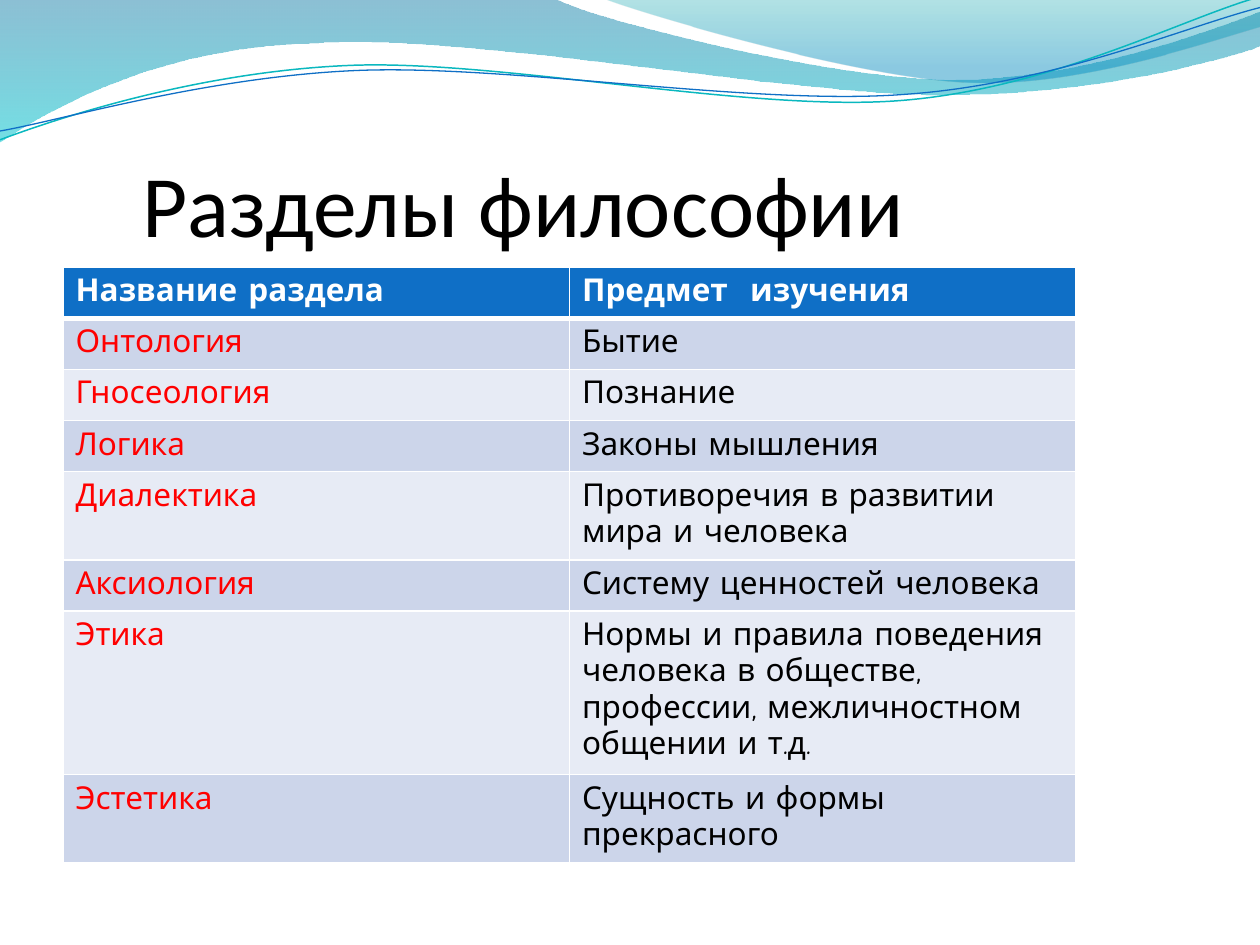
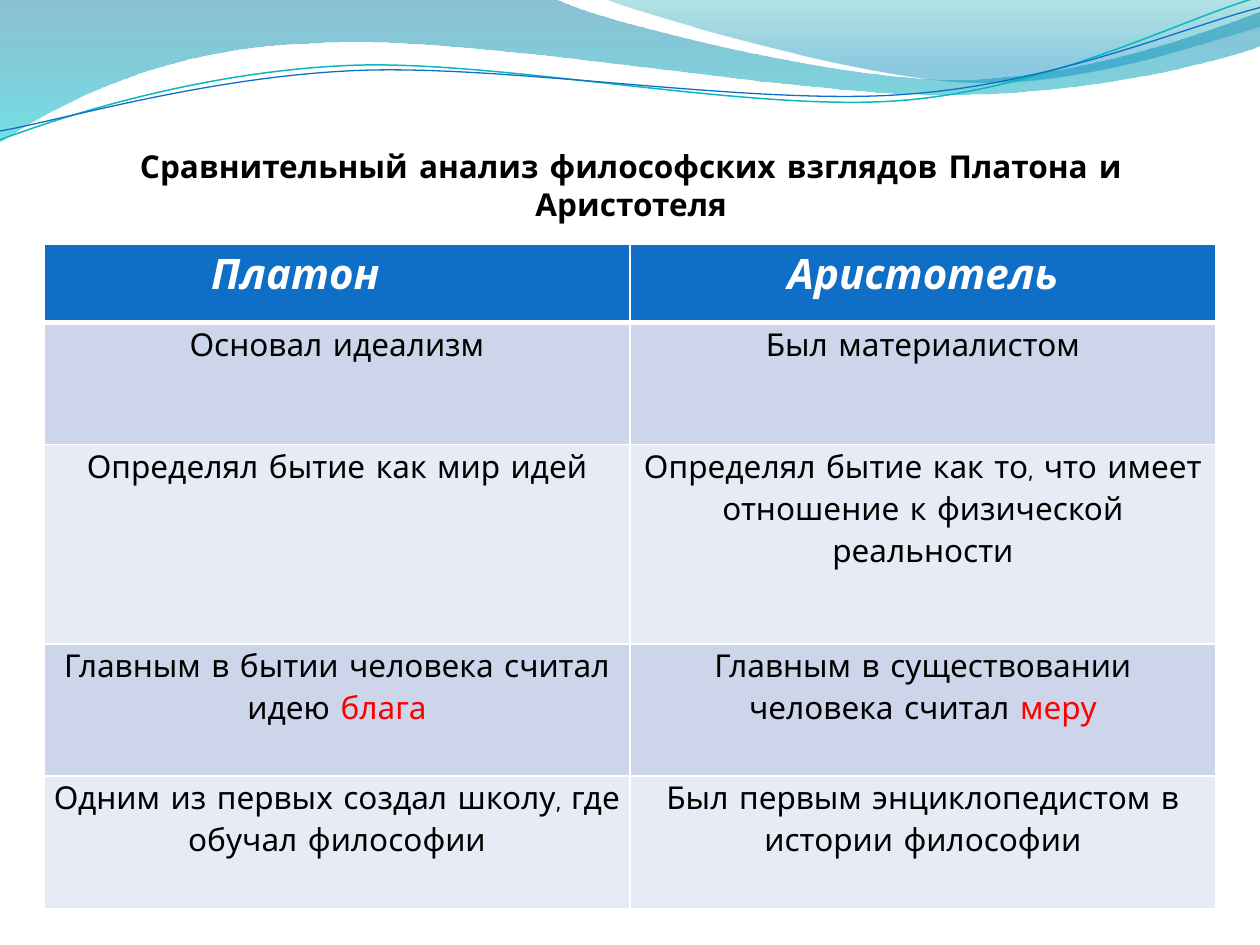
from lxml import etree
from pptx import Presentation, util as u
from pptx.dml.color import RGBColor
from pptx.enum import text
from pptx.oxml import ns

WHITE, BLACK = RGBColor(255, 255, 255), RGBColor(0, 0, 0)
RED = RGBColor(255, 0, 0)
HEADER_BLUE = RGBColor(0x0F, 0x6F, 0xC6)
LINE_TEAL = RGBColor(0x0A, 0xB8, 0xBF)
BANDS = RGBColor(0xCC, 0xD5, 0xEA), RGBColor(0xE7, 0xEB, 0xF5)
DEEP_BLUE, AQUA = RGBColor(0, 0x74, 0xA1), RGBColor(0, 0xC6, 0xCF)
SEA_GREEN, SKY_BLUE = RGBColor(0, 0xA1, 0xA9), RGBColor(0, 0x8B, 0xBF)
TABLE_FONT, TITLE_FONT = "Comic Neue", "Calibri"
SLIDE_WIDTH, SLIDE_HEIGHT = 10, 7.5

# Outlines in inches: a pair is a straight step, a six-tuple is a cubic curve.
# Gradient stops: position, colour, opacity in percent.
WAVE_FILLS = [
    ([(0, 0), (4.4, -0.01),
      (4.76, 0.17, 6.64, 0.63, 7.58, 0.63), (8.53, 0.63, 9.58, 0.26, 10, 0.09),
      (10.01, 0.36),
      (9.83, 0.44, 8.7, 0.76, 7.46, 0.75), (6.22, 0.75, 3.82, 0.28, 2.57, 0.34),
      (1.29, 0.36, 0.46, 0.83, -0.01, 1.13)],
     [(0, DEEP_BLUE, 45), (1, AQUA, 55)]),
    ([(4.79, -0.01),
      (5.09, 0.11, 6.82, 0.62, 7.69, 0.65), (8.56, 0.69, 9.61, 0.32, 10, 0.21),
      (10, 0)],
     [(0, SEA_GREEN, 30), (0.8, SKY_BLUE, 45)]),
]
WAVE_LINES = [
    ([(0, 1.11), (0.48, 0.93, 1.58, 0.57, 2.77, 0.52),
      (3.95, 0.47, 5.93, 0.89, 7.13, 0.8), (8.33, 0.71, 9.38, 0.15, 9.98, -0.02)],
     LINE_TEAL, 0.85),
    ([(0, 1.04), (0.47, 0.96, 1.64, 0.61, 2.83, 0.56),
      (4.03, 0.51, 5.97, 0.84, 7.17, 0.75), (8.36, 0.67, 9.41, 0.21, 10, 0.06)],
     HEADER_BLUE, 0.75),
]

BRANCHES = [
    ("Название раздела", "Предмет  изучения"),
    ("Онтология", "Бытие"),
    ("Гносеология", "Познание"),
    ("Логика", "Законы мышления"),
    ("Диалектика", "Противоречия в развитии мира и человека"),
    ("Аксиология", "Систему ценностей человека"),
    ("Этика", "Нормы и правила поведения человека в обществе, профессии, "
              "межличностном общении и т.д."),
    ("Эстетика", "Сущность и формы прекрасного"),
]
# A tuple holds plain text followed by a highlighted word.
PHILOSOPHERS = [
    ("Платон\t", "Аристотель"),
    ("Основал идеализм", "Был материалистом"),
    ("Определял бытие как мир идей",
     "Определял бытие как то, что имеет отношение к физической реальности"),
    (("Главным в бытии человека считал идею ", "блага"),
     ("Главным в существовании человека считал ", "меру")),
    ("Одним из первых создал школу, где обучал философии",
     "Был первым энциклопедистом в истории философии"),
]
NAME_TABS = [(1.26, "r"), (2, "l")]


def add_outline(slide, outline, close):
    """Build the outline through its end points, then bend the curved steps."""
    ends = [tuple(map(u.Inches, step[-2:])) for step in outline]
    builder = slide.shapes.build_freeform(*ends[0])
    builder.add_line_segments(ends[1:], close=close)
    shape = builder.convert_to_shape()
    shape.shadow.inherit = False
    segments = list(shape.element.iter(ns.qn("a:lnTo")))
    for segment, step in zip(segments, outline[1:]):
        if len(step) == 2:
            continue
        curve = etree.Element(ns.qn("a:cubicBezTo"))
        for x, y in zip(step[::2], step[1::2]):
            etree.SubElement(curve, ns.qn("a:pt"), x=str(u.Inches(x) - shape.left),
                             y=str(u.Inches(y) - shape.top))
        segment.getparent().replace(segment, curve)
    return shape


def add_waves(slide):
    for outline, stops in WAVE_FILLS:
        shape = add_outline(slide, outline, True)
        shape.line.fill.background()
        shape.fill.gradient()
        shape.fill.gradient_angle = 270
        for stop, (position, color, _) in zip(shape.fill.gradient_stops, stops):
            stop.position = position
            stop.color.rgb = color
        gradient = shape.element.spPr.find(ns.qn("a:gradFill"))
        for color, (_, _, opacity) in zip(gradient.iter(ns.qn("a:srgbClr")), stops):
            etree.SubElement(color, ns.qn("a:alpha"), val=str(opacity * 1000))
    for outline, color, width in WAVE_LINES:
        shape = add_outline(slide, outline, False)
        shape.fill.background()
        shape.line.color.rgb = color
        shape.line.width = u.Pt(width)


def add_run(paragraph, words, size, color, font=TABLE_FONT, bold=False, italic=False):
    run = paragraph.add_run()
    run.text = words
    run.font.name, run.font.size = font, u.Pt(size)
    run.font.bold, run.font.italic = bold, italic
    run.font.color.rgb = color


def add_title(slide, words, box, size, indent=0, align=None, **style):
    frame = slide.shapes.add_textbox(*map(u.Inches, box)).text_frame
    frame.word_wrap = True
    frame.vertical_anchor = text.MSO_ANCHOR.BOTTOM
    frame.margin_left, frame.margin_top = u.Inches(indent), u.Inches(0.05)
    frame.margin_right = frame.margin_bottom = 0
    paragraph = frame.paragraphs[0]
    paragraph.alignment = align
    add_run(paragraph, words, size, BLACK, **style)


def set_borders(cell, top=1, bottom=1):
    """White cell borders; widths in points."""
    properties = cell._tc.get_or_add_tcPr()
    for side, width in dict(L=1, R=1, T=top, B=bottom).items():
        line = etree.SubElement(properties, ns.qn("a:ln" + side), w=str(u.Pt(width)))
        fill = etree.SubElement(line, ns.qn("a:solidFill"))
        etree.SubElement(fill, ns.qn("a:srgbClr"), val=str(WHITE))


def add_table(slide, rows, box, heights):
    frame = slide.shapes.add_table(len(rows), len(rows[0]), *map(u.Inches, box))
    table = frame.table
    for row, height in zip(table.rows, heights):
        row.height = height
    frame.height = u.Inches(box[-1])
    for row_index, row in enumerate(rows):
        for column_index in range(len(row)):
            cell = table.cell(row_index, column_index)
            set_borders(cell, 3 if row_index == 1 else 1, 3 if row_index == 0 else 1)
            cell.fill.solid()
            cell.fill.fore_color.rgb = BANDS[(row_index - 1) % 2] if row_index else HEADER_BLUE
    return table


def build_branches(slide):
    add_title(slide, "Разделы философии", (0.5, 0.77, 9, 1.25), 50,
              indent=0.63, font=TITLE_FONT)
    table = add_table(slide, BRANCHES, (0.5, 2.12, 8.04, 4.73),
                      [u.Pt(29.2)] * len(BRANCHES))
    for row_index, row in enumerate(BRANCHES):
        for column_index, words in enumerate(row):
            color = (RED, BLACK)[column_index] if row_index else WHITE
            paragraph = table.cell(row_index, column_index).text_frame.paragraphs[0]
            add_run(paragraph, words, 18, color, bold=row_index == 0)


def build_philosophers(slide):
    add_title(slide, "Сравнительный анализ философских взглядов Платона и Аристотеля",
              (0.51, 0.76, 9, 1.01), 18, align=text.PP_ALIGN.CENTER, bold=True)
    table = add_table(slide, PHILOSOPHERS, (0.35, 1.94, 9.3, 5.28),
                      map(u.Inches, (0.62, 0.97, 1.58, 1.05, 1.05)))
    for row_index, row in enumerate(PHILOSOPHERS):
        is_header = row_index == 0
        for column_index, content in enumerate(row):
            cell = table.cell(row_index, column_index)
            cell.margin_left = cell.margin_right = u.Inches(0.07)
            cell.margin_top = cell.margin_bottom = 0
            paragraph = cell.text_frame.paragraphs[0]
            paragraph.alignment = text.PP_ALIGN.CENTER
            paragraph.line_spacing = 1.15
            paragraph.space_after = u.Pt(10)
            parts = (content,) if isinstance(content, str) else content
            if "\t" in parts[0]:
                tabs = etree.SubElement(paragraph._p.get_or_add_pPr(), ns.qn("a:tabLst"))
                for position, align in NAME_TABS:
                    etree.SubElement(tabs, ns.qn("a:tab"),
                                     pos=str(u.Inches(position)), algn=align)
            for words, color in zip(parts, (WHITE if is_header else BLACK, RED)):
                add_run(paragraph, words, 24 if is_header else 18, color,
                        bold=is_header, italic=is_header)


def main():
    presentation = Presentation()
    presentation.slide_width = u.Inches(SLIDE_WIDTH)
    presentation.slide_height = u.Inches(SLIDE_HEIGHT)
    for build in (build_branches, build_philosophers):
        slide = presentation.slides.add_slide(presentation.slide_layouts[6])
        add_waves(slide)
        build(slide)
    presentation.save("out.pptx")


if __name__ == "__main__":
    main()
